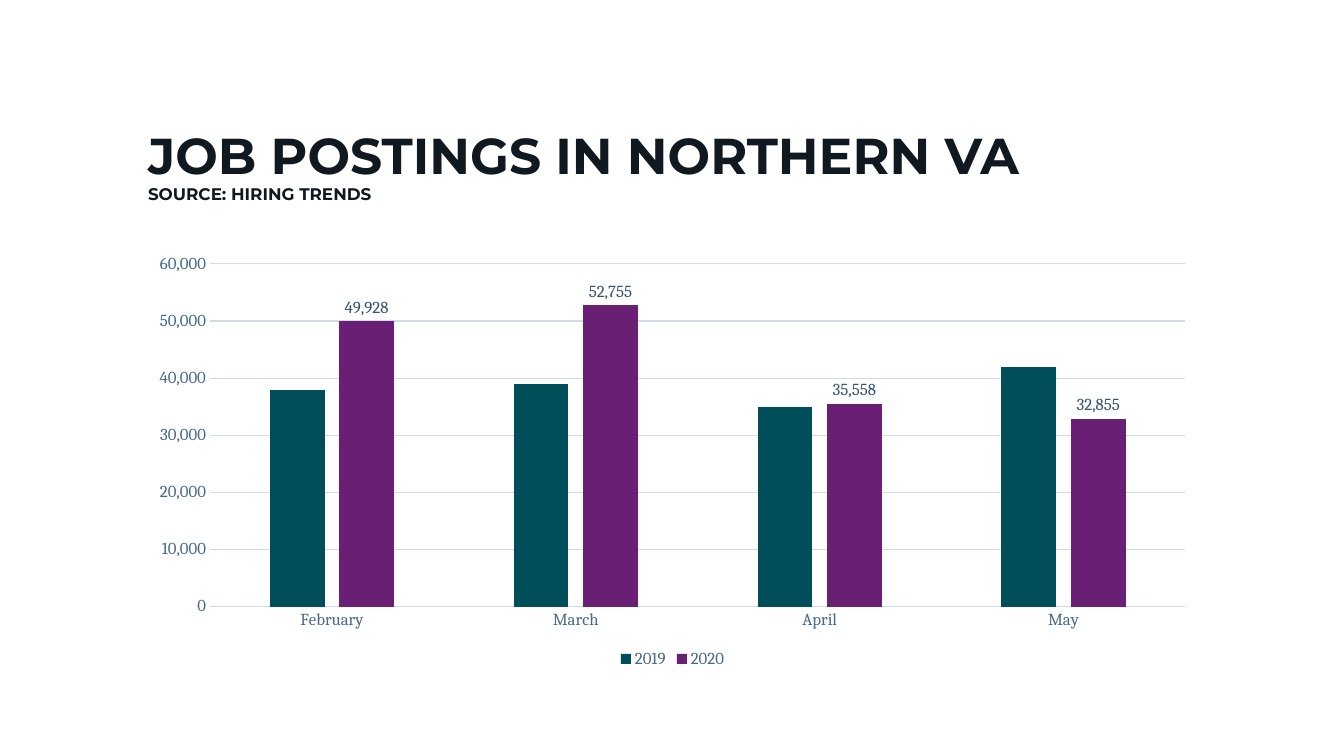
from pptx import Presentation
from pptx.chart.data import CategoryChartData as ChartData
from pptx.dml.color import RGBColor as Rgb
from pptx.enum.chart import XL_CHART_TYPE as Kind
from pptx.enum.chart import XL_LABEL_POSITION as Spot
from pptx.enum.chart import XL_LEGEND_POSITION as Side
from pptx.enum.chart import XL_TICK_MARK as Tick
from pptx.enum.text import MSO_ANCHOR as Anchor
from pptx.enum.text import PP_ALIGN as Align
from pptx.util import Inches, Pt

COLORS = {
    "ink": "101820",
    "axis": "46698C",
    "label": "37526D",
    "grid": "D1DCE8",
    "2019": "004E59",
    "2020": "691F74",
}
MONTHS = ["February", "March", "April", "May"]
POSTS = {
    "2019": [38000, 39000, 35000, 42000],
    "2020": [49928, 52755, 35558, 32855],
}
COMMAS = "#,##0"


def tint(key):
    return Rgb.from_string(COLORS[key])


def style(font, key, **form):
    for name, value in form.items():
        setattr(font, name, value)
    font.color.rgb = tint(key)


def rule(line):
    line.color.rgb = tint("grid")
    line.width = Pt(0.75)


def add_title(slide, box):
    frame = slide.shapes.add_textbox(*map(Inches, box)).text_frame
    frame.word_wrap = True
    frame.vertical_anchor = Anchor.BOTTOM
    para = frame.paragraphs[0]
    para.alignment = Align.LEFT
    para.line_spacing = 0.9
    lines = [("JOB POSTINGS IN NORTHERN VA", 36), ("SOURCE: HIRING TRENDS", 12)]
    for i, (text, size) in enumerate(lines):
        if i:
            para.add_line_break()
        run = para.add_run()
        run.text = text
        style(run.font, "ink", name="Montserrat", size=Pt(size), bold=True)


def add_bars(slide, box):
    data = ChartData(number_format=COMMAS)
    data.categories = MONTHS
    for year, counts in POSTS.items():
        data.add_series(year, counts)
    chart = slide.shapes.add_chart(
        Kind.COLUMN_CLUSTERED, *map(Inches, box), data).chart
    chart.has_title = False
    serif = {"name": "Cambria", "size": Pt(12), "bold": False}
    style(chart.font, "ink", name="Cambria", size=Pt(10))

    # Axes
    months, counts = chart.category_axis, chart.value_axis
    for axis in (months, counts):
        axis.major_tick_mark = axis.minor_tick_mark = Tick.NONE
        style(axis.tick_labels.font, "axis", **serif)
    rule(months.format.line)
    counts.format.line.fill.background()
    counts.has_major_gridlines = True
    rule(counts.major_gridlines.format.line)
    counts.minimum_scale, counts.maximum_scale = 0, 60000
    counts.major_unit = 10000
    counts.tick_labels.number_format = COMMAS
    counts.tick_labels.number_format_is_linked = False

    # Legend
    chart.has_legend = True
    chart.legend.position = Side.BOTTOM
    chart.legend.include_in_layout = False
    style(chart.legend.font, "axis", **serif)

    # Bars
    plot = chart.plots[0]
    plot.gap_width, plot.overlap = 219, -27
    plot.vary_by_categories = False
    for bars in plot.series:
        bars.format.fill.solid()
        bars.format.fill.fore_color.rgb = tint(bars.name)
        bars.invert_if_negative = False

    # Values above the later year only
    labels = plot.series[1].data_labels
    labels.show_value = True
    labels.position = Spot.OUTSIDE_END
    labels.number_format = COMMAS
    labels.number_format_is_linked = False
    style(labels.font, "label", **serif)


def main():
    deck = Presentation()
    deck.slide_width, deck.slide_height = Inches(13.33), Inches(7.5)
    slide = deck.slides.add_slide(deck.slide_layouts[6])
    left, width = 1.37, 10.6
    add_title(slide, (left, 0.77, width, 1.3))
    add_bars(slide, (left, 2.44, width, 4.23))
    deck.save("out.pptx")


if __name__ == "__main__":
    main()
